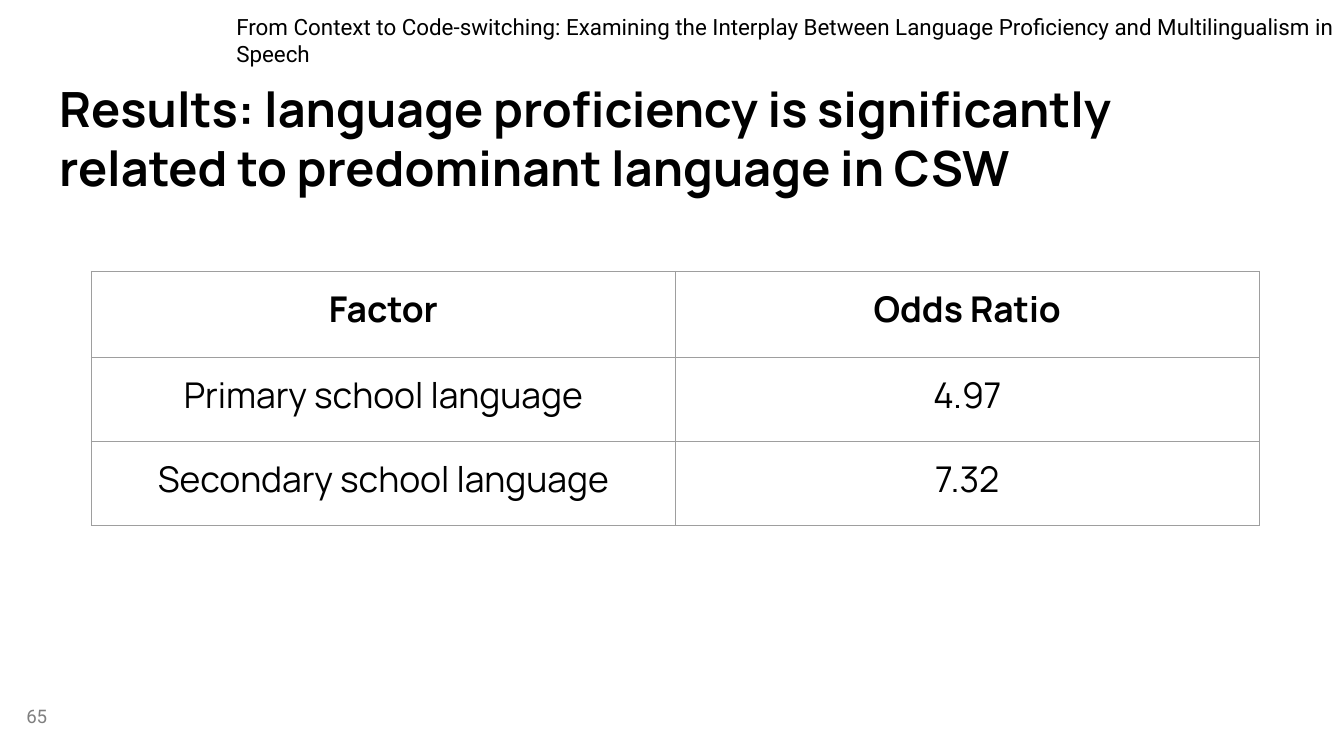
from dataclasses import dataclass

from lxml.etree import SubElement
from pptx import Presentation
from pptx.dml.color import RGBColor
from pptx.enum.text import MSO_ANCHOR as Anchor, MSO_AUTO_SIZE as AutoSize, PP_ALIGN as Align
from pptx.oxml.ns import qn
from pptx.util import Pt

PX = 4572  # EMU per px, 200 px to the inch


@dataclass(frozen=True)
class Theme:
    heading_font: str = "Manrope"
    label_font: str = "Roboto"
    ink: str = "000000"
    muted: str = "7F7F7F"
    border: str = "9E9E9E"
    title_size: int = 26
    table_size: int = 19
    header_size: int = 12
    number_size: int = 10
    border_width: float = 0.75
    inset: int = 20


THEME = Theme()


def emu(*lengths):
    return [length * PX for length in lengths]


def write(frame, text, font, size, color=THEME.ink, bold=False, align=Align.LEFT):
    """Fill a text frame with one formatted run."""
    paragraph = frame.paragraphs[0]
    paragraph.alignment = align
    run = paragraph.add_run()
    run.text = text
    run.font.name = font
    run.font.size = Pt(size)
    run.font.bold = bold
    run.font.color.rgb = RGBColor.from_string(color)


def set_insets(target):
    target.margin_left = target.margin_right = THEME.inset * PX
    target.margin_top = target.margin_bottom = THEME.inset * PX


def set_frame(frame, anchor):
    frame.word_wrap = True
    frame.auto_size = AutoSize.NONE
    frame.vertical_anchor = anchor
    set_insets(frame)


def place_title(slide, box, text):
    title = slide.shapes.title
    title.left, title.top, title.width, title.height = emu(*box)
    set_frame(title.text_frame, Anchor.TOP)
    write(title.text_frame, text, THEME.heading_font, THEME.title_size, bold=True)


def place_label(slide, box, text, size, color=THEME.ink, align=Align.LEFT, anchor=Anchor.TOP):
    label = slide.shapes.add_textbox(*emu(*box))
    set_frame(label.text_frame, anchor)
    write(label.text_frame, text, THEME.label_font, size, color, align=align)


def add_borders(cell):
    properties = cell._tc.get_or_add_tcPr()
    for position, side in enumerate(("a:lnL", "a:lnR", "a:lnT", "a:lnB")):
        line = SubElement(properties, qn(side), w=str(Pt(THEME.border_width)))
        fill = SubElement(line, qn("a:solidFill"))
        SubElement(fill, qn("a:srgbClr"), val=THEME.border)
        properties.insert(position, line)


def place_table(slide, box, row_heights, rows):
    """Draw a plain bordered table whose columns share the box width."""
    column_count = len(rows[0])
    table = slide.shapes.add_table(len(rows), column_count, *emu(*box)).table
    table.first_row = table.horz_banding = False
    for column in table.columns:
        column.width = box[2] * PX // column_count
    for row_index, (values, height) in enumerate(zip(rows, row_heights)):
        table.rows[row_index].height = height * PX
        for column_index, value in enumerate(values):
            cell = table.cell(row_index, column_index)
            cell.fill.background()
            cell.vertical_anchor = Anchor.TOP
            set_insets(cell)
            add_borders(cell)
            write(cell.text_frame, value, THEME.heading_font, THEME.table_size,
                  bold=row_index == 0, align=Align.CENTER)


def build_results_slide(presentation, box):
    left, top, width, height = box
    slide = presentation.slides.add_slide(presentation.slide_layouts[5])

    # Title
    place_title(slide, (left + 68, top + 98, width - 136, 136),
                "Results: language proficiency is significantly related to "
                "predominant language in CSW")

    # Running header
    place_label(slide, (left + 332, top, 1700, 122),
                "From Context to Code-switching: Examining the Interplay Between "
                "Language Proficiency and Multilingualism in Speech", THEME.header_size)

    # Slide number
    place_label(slide, (left - 30, top + height - 103, 120, 86), "65", THEME.number_size,
                THEME.muted, Align.RIGHT, Anchor.MIDDLE)

    # Odds ratio table
    row_heights = (128, 125, 125)
    place_table(slide, (left + 136, top + 404, 1738, sum(row_heights)), row_heights, [
        ("Factor", "Odds Ratio"),
        ("Primary school language", "4.97"),
        ("Secondary school language", "7.32"),
    ])


def main():
    presentation = Presentation()
    width, height = 2000, 1125
    presentation.slide_width, presentation.slide_height = emu(width, height)
    build_results_slide(presentation, (0, 0, width, height))
    presentation.save("out.pptx")


if __name__ == "__main__":
    main()
